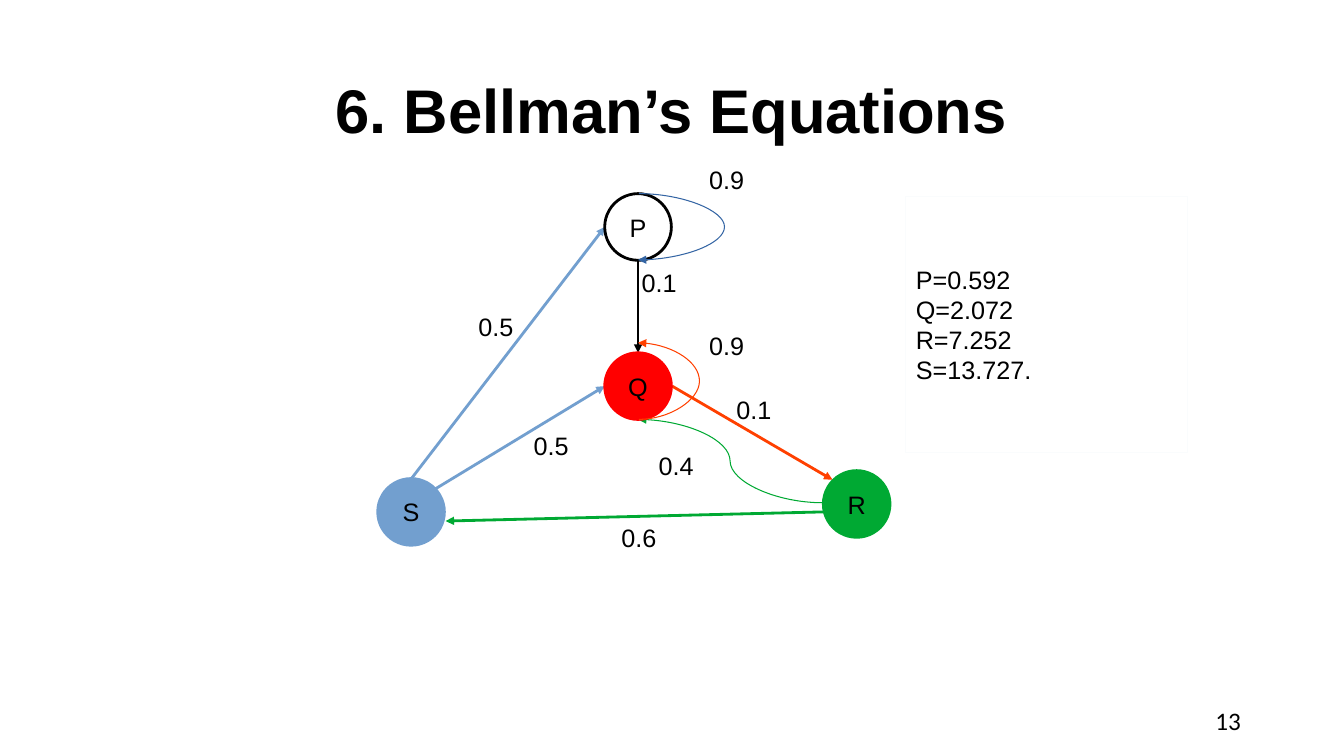
from lxml import etree
from pptx import Presentation
from pptx.dml.color import RGBColor
from pptx.enum.shapes import MSO_CONNECTOR, MSO_SHAPE
from pptx.enum.text import MSO_ANCHOR, PP_ALIGN
from pptx.oxml.ns import qn
from pptx.util import Cm, Pt

STRAIGHT, CURVE = MSO_CONNECTOR.STRAIGHT, MSO_CONNECTOR.CURVE
OVAL, RECTANGLE = MSO_SHAPE.OVAL, MSO_SHAPE.RECTANGLE
MIDDLE = MSO_ANCHOR.MIDDLE
LEFT, CENTER, RIGHT = PP_ALIGN.LEFT, PP_ALIGN.CENTER, PP_ALIGN.RIGHT

BLACK = RGBColor(0x00, 0x00, 0x00)
WHITE = RGBColor(0xFF, 0xFF, 0xFF)
RED = RGBColor(0xFF, 0x00, 0x00)
ORANGE = RGBColor(0xFF, 0x40, 0x00)
GREEN = RGBColor(0x00, 0xA9, 0x33)
LIGHT_BLUE = RGBColor(0x72, 0x9F, 0xCF)
DARK_BLUE = RGBColor(0x34, 0x65, 0xA4)
PALE = RGBColor(0xFA, 0xFC, 0xFD)

# All lengths are centimetres; graph positions are relative to its box.
NODE_SIZE = 1.68
LABEL_WIDTH, LABEL_HEIGHT = 2.74, 1.68
NODES = [  # name, centre, fill, outline
    ("S", (0.86, 9.2), LIGHT_BLUE, LIGHT_BLUE),
    ("R", (12.09, 9.0), GREEN, GREEN),
    ("Q", (6.58, 6.03), RED, RED),
    ("P", (6.58, 2.02), WHITE, BLACK),
]
EDGES = [  # start, end, colour
    ((6.58, 2.85), (6.58, 5.19), BLACK),
    ((11.25, 9.2), (1.73, 9.43), GREEN),
    ((0.86, 8.37), (5.74, 2.02), LIGHT_BLUE),
    ((1.47, 8.62), (5.74, 6.03), LIGHT_BLUE),
    ((7.44, 6.03), (11.48, 8.39), ORANGE),
]
RETURN_CURVE = ((11.23, 8.97), (6.58, 6.87), GREEN, 8.9)
LOOPS = [  # start, end, colour, horizontal position of the bend
    ((6.6, 6.87), (6.58, 4.94), ORANGE, 8.13),
    ((6.6, 1.18), (6.58, 2.85), DARK_BLUE, 8.76),
]
PROBABILITIES = [  # text, centre
    ("0.9", (8.81, 0.82)),
    ("0.1", (7.11, 3.41)),
    ("0.9", (8.81, 5.01)),
    ("0.1", (9.5, 6.61)),
    ("0.5", (3.0, 4.53)),
    ("0.5", (4.39, 7.53)),
    ("0.4", (7.54, 8.03)),
    ("0.6", (6.6, 9.84)),
]
VALUES = ["P=0.592", "Q=2.072", "R=7.252", "S=13.727."]


def write_lines(shape, lines, alignment, font_name="Arial", size=18, bold=False):
    frame = shape.text_frame
    frame.word_wrap = True
    frame.vertical_anchor = MIDDLE
    frame.text = "\n".join(lines)
    for paragraph in frame.paragraphs:
        paragraph.alignment = alignment
        paragraph.font.name = font_name
        paragraph.font.size = Pt(size)
        paragraph.font.bold = bold
        paragraph.font.color.rgb = BLACK


def add_filled_shape(slide, kind, box, fill, outline, line_width):
    shape = slide.shapes.add_shape(kind, *map(Cm, box))
    shape.shadow.inherit = False
    shape.fill.solid()
    shape.fill.fore_color.rgb = fill
    shape.line.color.rgb = outline
    shape.line.width = Pt(line_width)
    return shape


def add_arrow(slide, origin, start, end, color, bend=None):
    """Draw a straight arrow, or a thin curved one that bends at a given x."""
    left, top = origin
    kind = STRAIGHT if bend is None else CURVE
    arrow = slide.shapes.add_connector(
        kind, Cm(left + start[0]), Cm(top + start[1]),
        Cm(left + end[0]), Cm(top + end[1]))
    arrow.line.color.rgb = color
    arrow.line.width = Pt(2 if bend is None else 0.75)
    properties = arrow.line._get_or_add_ln()
    etree.SubElement(properties, qn("a:tailEnd"), type="triangle")
    etree.SubElement(arrow._element.spPr, qn("a:effectLst"))
    if bend is not None:
        share = (start[0] - bend) / (start[0] - end[0])
        guides = arrow._element.spPr.find(qn("a:prstGeom")).get_or_add_avLst()
        etree.SubElement(guides, qn("a:gd"), name="adj1",
                         fmla=f"val {round(share * 100000)}")


def add_title(slide, left, top, width, height):
    title = slide.shapes.title
    title.left, title.top = Cm(left), Cm(top)
    title.width, title.height = Cm(width), Cm(height)
    write_lines(title, ["6. Bellman’s Equations"], CENTER, size=44, bold=True)
    title.text_frame.paragraphs[0].line_spacing = 0.9


def add_state_graph(slide, left, top):
    origin = (left, top)
    for text, (x, y) in PROBABILITIES:
        label = slide.shapes.add_textbox(
            Cm(left + x - LABEL_WIDTH / 2), Cm(top + y - LABEL_HEIGHT / 2),
            Cm(LABEL_WIDTH), Cm(LABEL_HEIGHT))
        write_lines(label, [text], CENTER)
    for edge in [*EDGES, RETURN_CURVE]:
        add_arrow(slide, origin, *edge)
    for name, (x, y), fill, outline in NODES:
        box = (left + x - NODE_SIZE / 2, top + y - NODE_SIZE / 2, NODE_SIZE, NODE_SIZE)
        node = add_filled_shape(slide, OVAL, box, fill, outline, 2)
        write_lines(node, [name], CENTER)
    for loop in LOOPS:
        add_arrow(slide, origin, *loop)


def add_values(slide, *box):
    panel = add_filled_shape(slide, RECTANGLE, box, WHITE, PALE, 0.75)
    write_lines(panel, VALUES, LEFT)


def add_page_number(slide, *box):
    number = slide.shapes.add_textbox(*map(Cm, box))
    write_lines(number, ["13"], RIGHT, font_name="Calibri")


def main():
    presentation = Presentation()
    presentation.slide_width, presentation.slide_height = Cm(33.87), Cm(19.05)
    slide = presentation.slides.add_slide(presentation.slide_layouts[5])
    add_title(slide, 2.34, 1.02, 29.18, 3.66)
    add_state_graph(slide, 9.5, 3.7)
    add_values(slide, 22.83, 4.95, 7.11, 6.45)
    add_page_number(slide, 23.93, 17.65, 7.59, 0.99)
    presentation.save("out.pptx")


if __name__ == "__main__":
    main()
